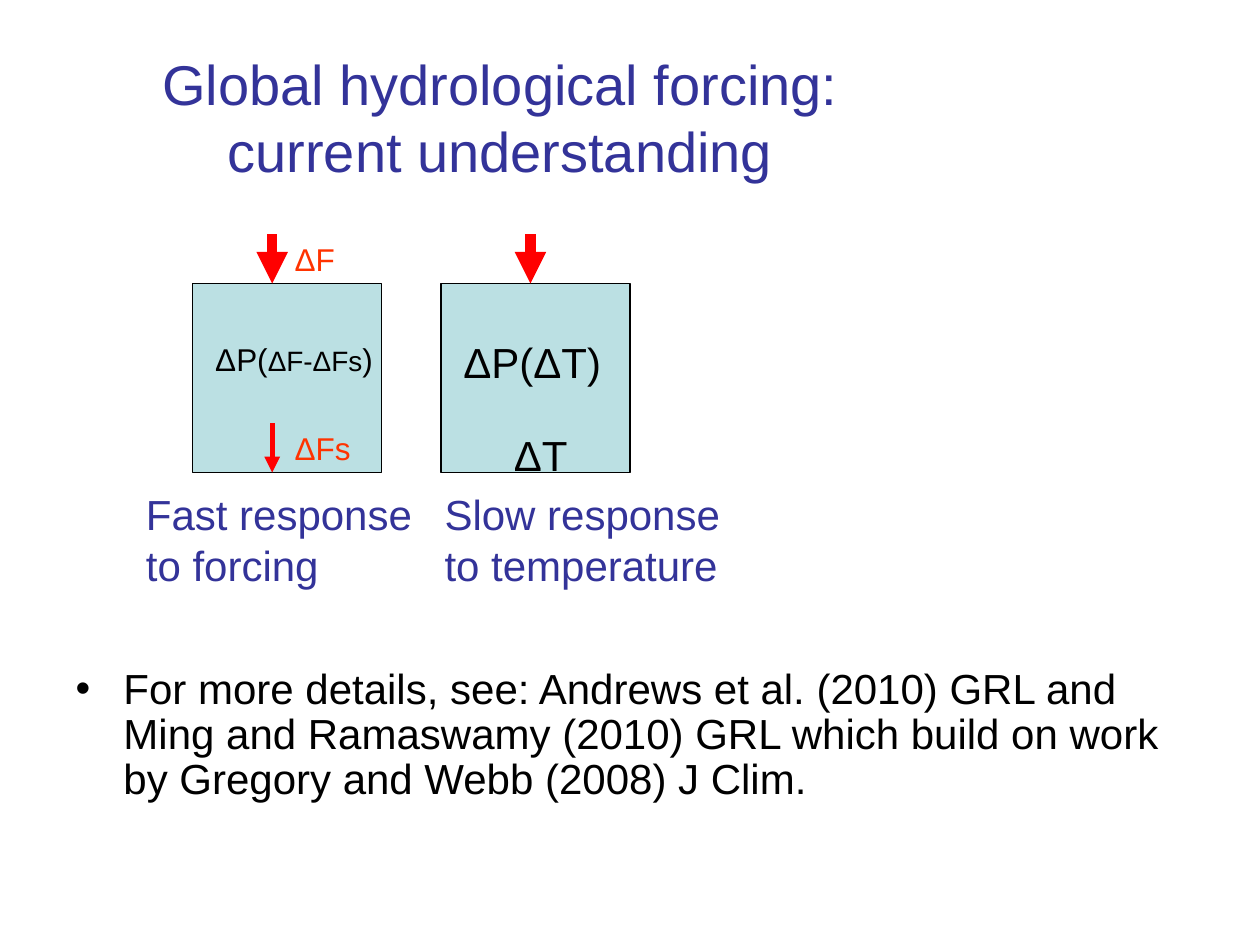
"""Build the slide on fast and slow hydrological responses to forcing."""
from lxml import etree
from pptx import Presentation
from pptx.dml.color import RGBColor
from pptx.enum import shapes, text
from pptx.oxml import ns
from pptx.util import Inches, Pt

COLOURS = {"navy": "333399", "black": "000000", "box": "BBE0E3",
           "arrow": "FF0000", "flux": "FF3300"}


def colour(name):
    return RGBColor.from_string(COLOURS[name])


def place(part, left, top, width, height):
    part.left, part.top = Inches(left), Inches(top)
    part.width, part.height = Inches(width), Inches(height)


def write(part, runs, size=24, tint="black", align=None, wrap=True,
          anchor=text.MSO_ANCHOR.TOP, bullet=False):
    frame = part.text_frame
    frame.word_wrap = wrap
    frame.auto_size = text.MSO_AUTO_SIZE.NONE
    frame.vertical_anchor = anchor
    paragraph = frame.paragraphs[0]
    paragraph.space_before = Pt(0)
    if align is not None:
        paragraph.alignment = align
    if bullet:
        paragraph.line_spacing = 0.9
        props = paragraph._p.get_or_add_pPr()
        props.set("marL", str(Inches(0.38)))
        props.set("indent", str(-Inches(0.38)))
        etree.SubElement(props, ns.qn("a:buChar")).set("char", "•")
    for wording, run_size in [(runs, size)] if isinstance(runs, str) else runs:
        run = paragraph.add_run()
        run.text = wording
        run.font.name = "Arial"
        run.font.size = Pt(run_size)
        run.font.color.rgb = colour(tint)


def add_label(slide, at, runs, **style):
    label = slide.shapes.add_textbox(*map(Inches, at))
    write(label, runs, **style)


def add_box(slide, left):
    box = slide.shapes.add_shape(shapes.MSO_SHAPE.RECTANGLE, Inches(left),
                                 Inches(2.25), Inches(1.5), Inches(1.5))
    box.shadow.inherit = False
    box.fill.solid()
    box.fill.fore_color.rgb = colour("box")
    box.line.color.rgb = colour("black")
    box.line.width = Pt(0.75)


def add_arrow(slide, x, top, weight):
    arrow = slide.shapes.add_connector(shapes.MSO_CONNECTOR.STRAIGHT, Inches(x),
                                       Inches(top), Inches(x), Inches(top + 0.39))
    arrow.line.color.rgb = colour("arrow")
    arrow.line.width = Pt(weight)
    etree.SubElement(arrow.line._get_or_add_ln(), ns.qn("a:tailEnd")).set("type", "triangle")
    etree.SubElement(arrow._element.spPr, ns.qn("a:effectLst"))


def main():
    deck = Presentation()
    deck.slide_width, deck.slide_height = Inches(10), Inches(7.5)
    slide = deck.slides.add_slide(deck.slide_layouts[1])

    title, references = slide.placeholders
    place(title, 0.5, 0.3, 6.94, 1.25)
    write(title, "Global hydrological forcing: current understanding", size=32,
          tint="navy", align=text.PP_ALIGN.CENTER, anchor=text.MSO_ANCHOR.MIDDLE)
    place(references, 0.5, 5.25, 9, 1.45)
    write(references, "For more details, see: Andrews et al. (2010) GRL and Ming and "
          "Ramaswamy (2010) GRL which build on work by Gregory and Webb (2008) J Clim.",
          bullet=True)

    for left in (3.5, 1.53):
        add_box(slide, left)
    for x, top, weight in ((2.16, 1.86, 6), (2.16, 3.36, 3), (4.21, 1.86, 6)):
        add_arrow(slide, x, top, weight)

    add_label(slide, (3.98, 3.36, 0.79, 0.5), "ΔT")
    add_label(slide, (3.58, 2.62, 1.42, 0.5), "ΔP(ΔT)")
    add_label(slide, (1.61, 2.65, 1.58, 0.4), [("ΔP(", 18), ("ΔF-ΔFs", 16), (")", 18)])
    for left, response in ((1.06, "Fast response to forcing"),
                           (3.43, "Slow response to temperature")):
        add_label(slide, (left, 3.83, 2.44, 0.9), response, tint="navy")
    for top, width, flux in ((1.86, 0.52, "ΔF"), (3.36, 0.65, "ΔFs")):
        add_label(slide, (2.24, top, width, 0.4), flux, size=18, tint="flux", wrap=False)

    deck.save("out.pptx")


if __name__ == "__main__":
    main()
